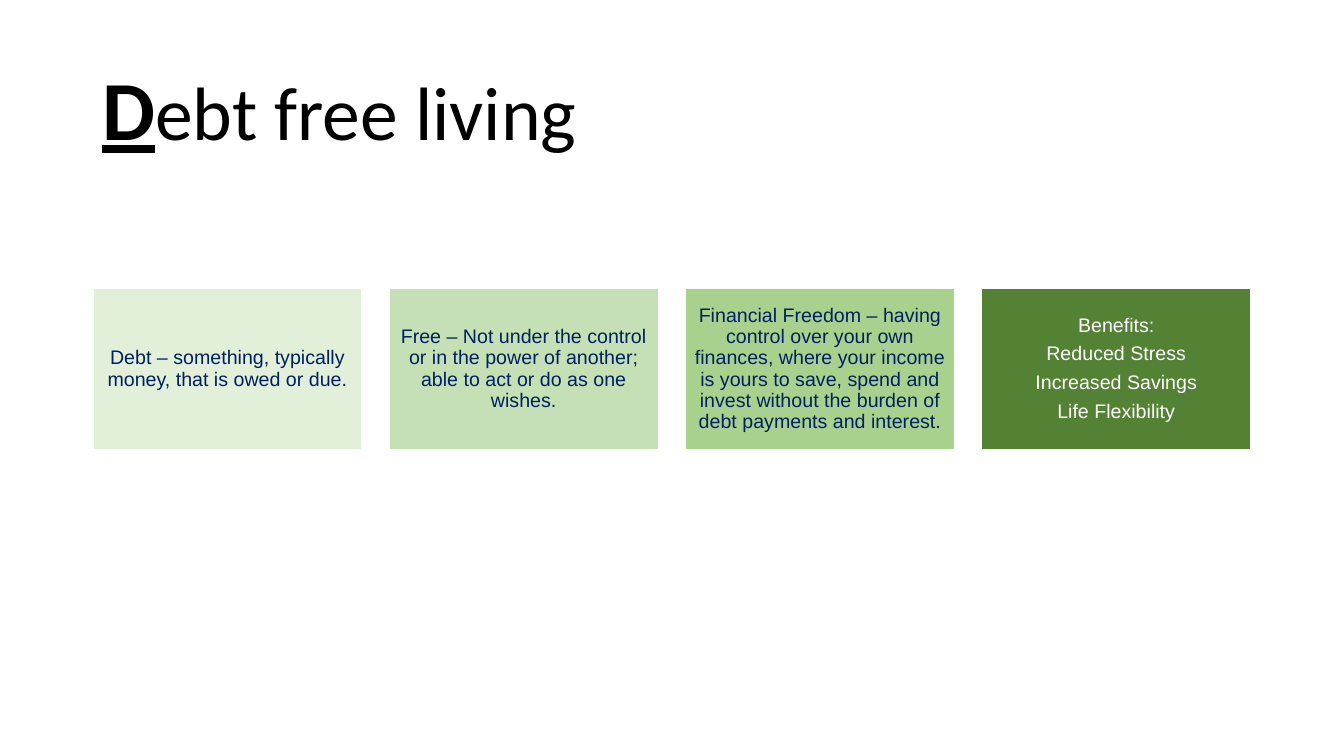
from pptx import Presentation
from pptx.dml.color import RGBColor
from pptx.enum.shapes import MSO_SHAPE
from pptx.enum.text import MSO_ANCHOR, PP_ALIGN
from pptx.util import Pt


def paint(color, code):
    color.rgb = RGBColor.from_string(code)


deck = Presentation()
deck.slide_width, deck.slide_height = Pt(960), Pt(540)
slide = deck.slides.add_slide(deck.slide_layouts[6])

# Title with a large underlined initial
title = slide.shapes.add_textbox(Pt(66), Pt(28.75), Pt(828), Pt(104.4))
frame = title.text_frame
frame.word_wrap = True
frame.vertical_anchor = MSO_ANCHOR.MIDDLE
para = frame.paragraphs[0]
para.line_spacing = 0.9
for text, size, strong in [("D", 60, True), ("ebt free living", 54, False)]:
    run = para.add_run()
    run.text = text
    font = run.font
    font.name, font.size = "Calibri", Pt(size)
    font.bold = font.underline = strong
    paint(font.color, "000000")

# Row of four cards: fill, text colour, text
cards = [
    ("E2F0D9", "002060",
     "Debt – something, typically money, that is owed or due."),
    ("C5E0B4", "002060",
     "Free – Not under the control or in the power of another; "
     "able to act or do as one wishes."),
    ("A9D18E", "002060",
     "Financial Freedom – having control over your own finances, "
     "where your income is yours to save, spend and invest "
     "without the burden of debt payments and interest."),
    ("548235", "FFFFFF",
     "Benefits:\nReduced Stress\nIncreased Savings\nLife Flexibility"),
]
left, top, width, height, step = 66.4, 206, 192.3, 115.3, 211.6

for index, (fill, ink, text) in enumerate(cards):
    card = slide.shapes.add_shape(
        MSO_SHAPE.RECTANGLE, Pt(left + index * step), Pt(top),
        Pt(width), Pt(height))
    card.shadow.inherit = False
    card.fill.solid()
    paint(card.fill.fore_color, fill)
    paint(card.line.color, "FFFFFF")
    card.line.width = Pt(1)

    frame = card.text_frame
    frame.word_wrap = True
    frame.vertical_anchor = MSO_ANCHOR.MIDDLE
    frame.margin_left = frame.margin_right = Pt(3.8)
    frame.margin_top = frame.margin_bottom = Pt(3.8)
    frame.text = text
    for para in frame.paragraphs:
        para.alignment = PP_ALIGN.CENTER
        para.line_spacing = 0.9
        para.space_after = Pt(5.5)
        for run in para.runs:
            run.font.name, run.font.size = "Arial", Pt(14)
            paint(run.font.color, ink)

deck.save("out.pptx")
